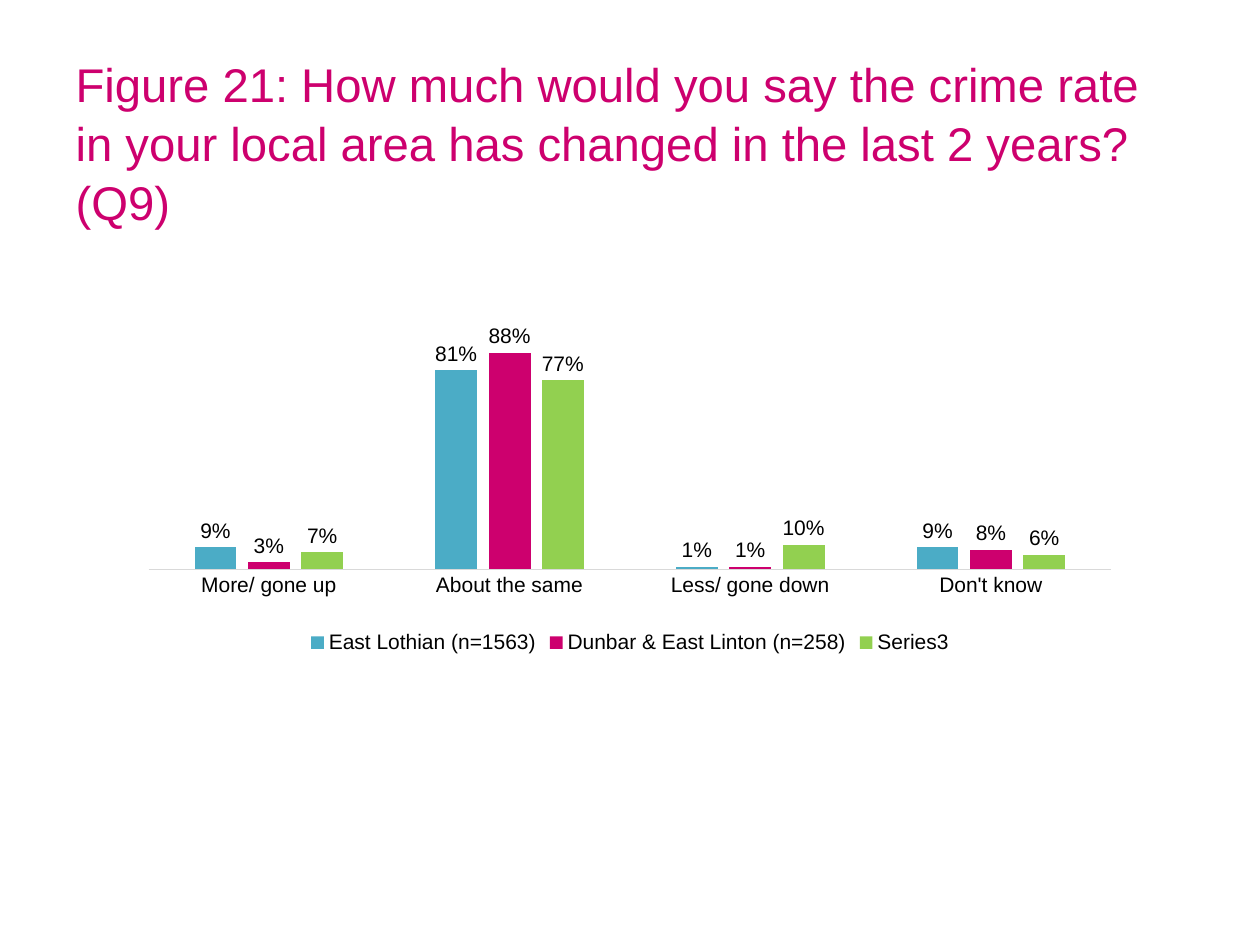
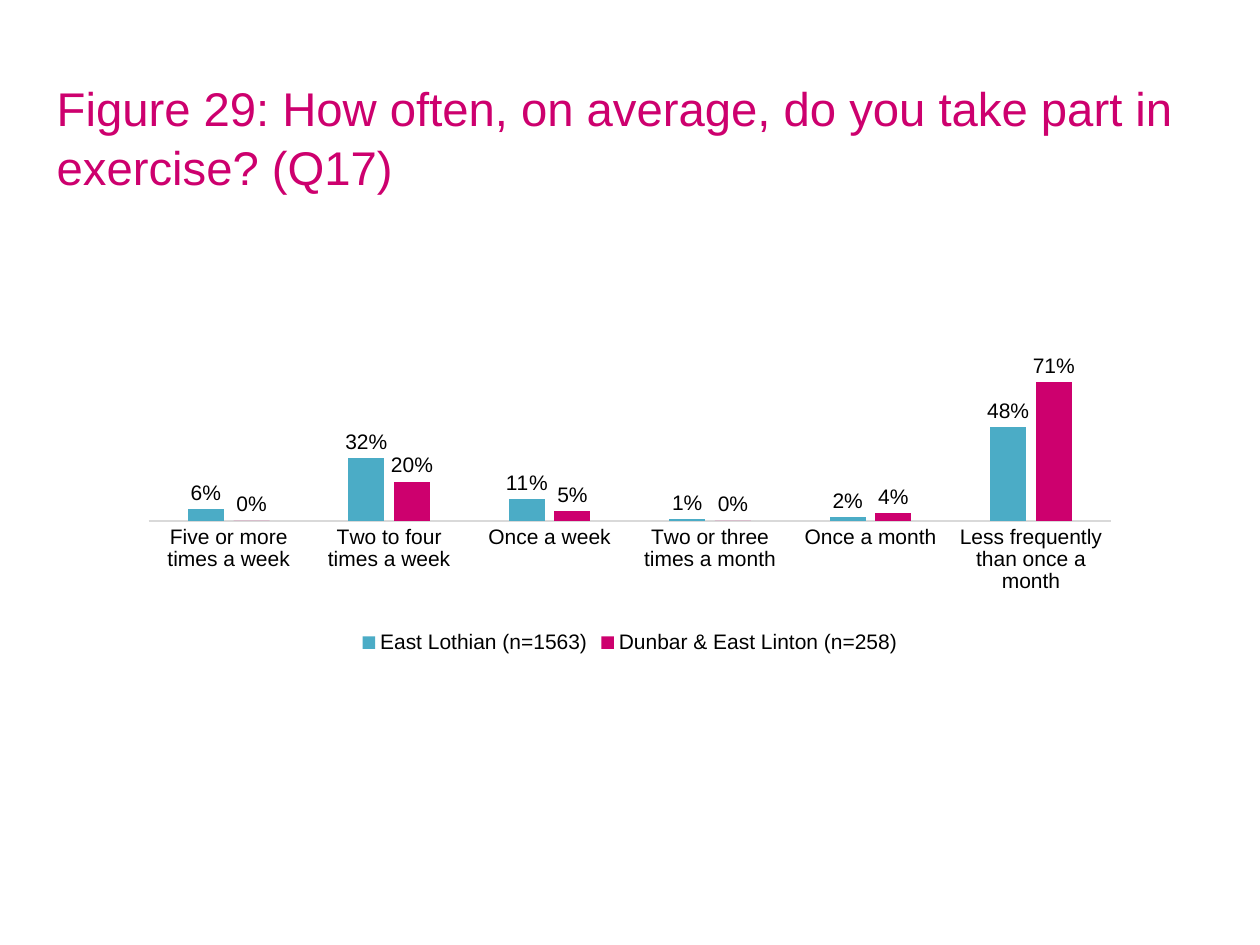
"""Build two survey slides, each with a title and a clustered column chart."""
from lxml import etree
from pptx import Presentation
from pptx.chart.data import CategoryChartData
from pptx.dml.color import RGBColor
from pptx.enum.chart import XL_CHART_TYPE, XL_LABEL_POSITION, XL_LEGEND_POSITION, XL_TICK_MARK
from pptx.enum.text import MSO_ANCHOR, MSO_AUTO_SIZE, PP_ALIGN
from pptx.oxml.ns import qn
from pptx.util import Pt

EMU_PER_PX = 9144
TITLE_ONLY = 5


def px(length):
    return length * EMU_PER_PX


def color(hex_value):
    return RGBColor.from_string(hex_value)


class SurveyDeck:
    typeface = "Arial"
    title_color = "CD006E"
    text_color = "000000"
    axis_color = "D9D9D9"
    series_colors = ("4BACC6", "CD006E", "92D050")
    chart_box = (102, 227, 796, 296)

    def __init__(self):
        self.presentation = Presentation()
        self.presentation.slide_width = px(1000)
        self.presentation.slide_height = px(750)
        self.slide = None

    def add_slide(self):
        layout = self.presentation.slide_layouts[TITLE_ONLY]
        self.slide = self.presentation.slides.add_slide(layout)

    def style_font(self, font, size, hex_value):
        font.name = self.typeface
        font.size = Pt(size)
        font.bold = False
        font.color.rgb = color(hex_value)

    def title(self, question, left, top, width, height):
        heading = self.slide.shapes.title
        heading.left, heading.top = px(left), px(top)
        heading.width, heading.height = px(width), px(height)
        frame = heading.text_frame
        frame.text = question
        frame.word_wrap = True
        frame.auto_size = MSO_AUTO_SIZE.NONE
        frame.vertical_anchor = MSO_ANCHOR.MIDDLE
        paragraph = frame.paragraphs[0]
        paragraph.alignment = PP_ALIGN.LEFT
        paragraph.line_spacing = 1.04
        self.style_font(paragraph.runs[0].font, 27, self.title_color)

    def column_chart(self, answers, responses, axis_top, plot_top, plot_height):
        data = CategoryChartData(number_format="0%")
        data.categories = answers
        for group, shares in responses.items():
            data.add_series(group, shares)
        chart = self.slide.shapes.add_chart(
            XL_CHART_TYPE.COLUMN_CLUSTERED, *map(px, self.chart_box), data
        ).chart
        chart.has_title = False
        self.style_font(chart.font, 12, self.text_color)
        self.legend(chart)
        self.axes(chart, axis_top)
        self.columns(chart.plots[0])
        self.place_plot(chart, plot_top, plot_height)

    def legend(self, chart):
        chart.has_legend = True
        chart.legend.position = XL_LEGEND_POSITION.BOTTOM
        chart.legend.include_in_layout = False
        self.style_font(chart.legend.font, 12, self.text_color)

    def axes(self, chart, axis_top):
        answers = chart.category_axis
        answers.major_tick_mark = answers.minor_tick_mark = XL_TICK_MARK.NONE
        answers.format.line.color.rgb = color(self.axis_color)
        answers.format.line.width = Pt(0.75)
        self.style_font(answers.tick_labels.font, 12, self.text_color)
        shares = chart.value_axis
        shares.has_major_gridlines = False
        shares.minimum_scale = 0
        shares.maximum_scale = axis_top
        shares.tick_labels.number_format = "0%"
        shares.tick_labels.number_format_is_linked = False
        shares.visible = False

    def columns(self, plot):
        plot.vary_by_categories = False
        plot.gap_width = 219
        plot.overlap = -27
        for series, fill_color in zip(plot.series, self.series_colors):
            series.format.fill.solid()
            series.format.fill.fore_color.rgb = color(fill_color)
            series.invert_if_negative = False
            labels = series.data_labels
            labels.show_value = True
            labels.position = XL_LABEL_POSITION.OUTSIDE_END
            labels.number_format = "0%"
            labels.number_format_is_linked = False
            self.style_font(labels.font, 12, self.text_color)

    def place_plot(self, chart, top, height):
        plot_area = chart.plots[0]._element.getparent()
        for previous in plot_area.findall(qn("c:layout")):
            plot_area.remove(previous)
        layout = etree.Element(qn("c:layout"))
        manual = etree.SubElement(layout, qn("c:manualLayout"))
        settings = {
            "layoutTarget": "inner", "xMode": "edge", "yMode": "edge",
            "x": 0.02, "y": top, "w": 0.96, "h": height,
        }
        for tag, value in settings.items():
            etree.SubElement(manual, qn(f"c:{tag}")).set("val", str(value))
        plot_area.insert(0, layout)

    def save(self):
        self.presentation.save("out.pptx")


def main():
    county, ward = "East Lothian (n=1563)", "Dunbar & East Linton (n=258)"
    deck = SurveyDeck()

    deck.add_slide()
    deck.title(
        "Figure 21: How much would you say the crime rate in your local area "
        "has changed in the last 2 years? (Q9)",
        50, 30, 900, 164,
    )
    deck.column_chart(
        ["More/ gone up", "About the same", "Less/ gone down", "Don't know"],
        {
            county: (0.09, 0.81, 0.01, 0.09),
            ward: (0.03, 0.88, 0.01, 0.08),
            "Series3": (0.07, 0.77, 0.1, 0.06),
        },
        axis_top=1, plot_top=0.1, plot_height=0.66,
    )

    deck.add_slide()
    deck.title(
        "Figure 29: How often, on average, do you take part in exercise? (Q17)",
        35, 30, 965, 156,
    )
    deck.column_chart(
        [
            "Five or more times a week", "Two to four times a week", "Once a week",
            "Two or three times a month", "Once a month",
            "Less frequently than once a month",
        ],
        {
            county: (0.06, 0.32, 0.11, 0.01, 0.02, 0.48),
            ward: (0, 0.2, 0.05, 0, 0.04, 0.71),
        },
        axis_top=0.8, plot_top=0.21, plot_height=0.42,
    )

    deck.save()


if __name__ == "__main__":
    main()
